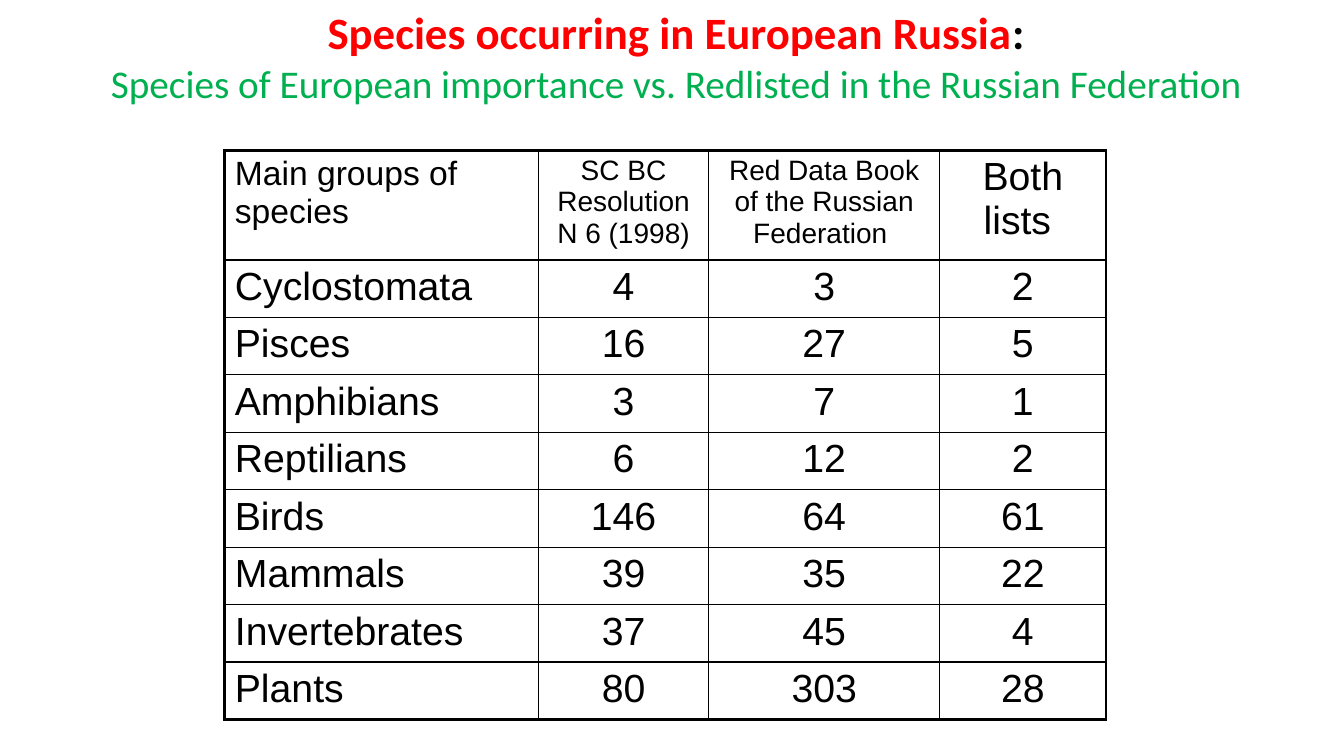
from dataclasses import dataclass

from lxml import etree
from pptx import Presentation
from pptx import util as u
from pptx.dml import color
from pptx.enum import text
from pptx.oxml import ns

BLACK = "000000"
CENTER = text.PP_ALIGN.CENTER
LEFT = text.PP_ALIGN.LEFT


@dataclass(frozen=True)
class Style:
    size: float
    font: str = "Arial"
    ink: str = BLACK
    bold: bool = False


@dataclass(frozen=True)
class Column:
    heading: str
    heading_size: float
    width: float
    align: text.PP_ALIGN = CENTER


COLUMNS = [
    Column("Main groups of species", 24, 3.11, LEFT),
    Column("SC BC Resolution N 6 (1998)", 20, 1.69),
    Column("Red Data Book of the Russian Federation ", 20, 2.29),
    Column("Both lists ", 28, 1.65),
]
SPECIES = [
    ("Cyclostomata", 4, 3, 2),
    ("Pisces", 16, 27, 5),
    ("Amphibians", 3, 7, 1),
    ("Reptilians", 6, 12, 2),
    ("Birds", 146, 64, 61),
    ("Mammals", 39, 35, 22),
    ("Invertebrates", 37, 45, 4),
    ("Plants", 80, 303, 28),
]
HEADING_HEIGHT, ROW_HEIGHT = 1.09, 0.57
BODY = Style(28)
TITLE = [
    [("Species occurring in European Russia", Style(32, "Calibri", "FF0000", True)),
     (":", Style(32, "Calibri", BLACK, True))],
    [("Species of European importance vs. Redlisted in the Russian Federation",
      Style(28, "Calibri", "00B050"))],
]


def rgb(value: str) -> color.RGBColor:
    return color.RGBColor.from_string(value)


def add_span(para, words: str, style: Style) -> None:
    span = para.add_run()
    span.text = words
    span.font.size = u.Pt(style.size)
    span.font.name = style.font
    span.font.bold = style.bold
    span.font.color.rgb = rgb(style.ink)


def add_border(cell, side: str, width: float) -> None:
    properties = cell._tc.get_or_add_tcPr()
    line = etree.SubElement(properties, ns.qn(f"a:ln{side}"), w=str(u.Pt(width)))
    fill = etree.SubElement(line, ns.qn("a:solidFill"))
    etree.SubElement(fill, ns.qn("a:srgbClr"), val=BLACK)


def fill_title(title) -> None:
    title.left, title.top = u.Inches(0.55), u.Inches(0)
    title.width, title.height = u.Inches(12.31), u.Inches(2.12)
    frame = title.text_frame
    frame.word_wrap = True
    frame.auto_size = text.MSO_AUTO_SIZE.NONE
    frame.vertical_anchor = text.MSO_ANCHOR.TOP
    for index, spans in enumerate(TITLE):
        para = frame.add_paragraph() if index else frame.paragraphs[0]
        para.alignment = CENTER
        for words, style in spans:
            add_span(para, words, style)


def add_species_table(page) -> None:
    row_count, column_count = len(SPECIES) + 1, len(COLUMNS)
    width = sum(column.width for column in COLUMNS)
    height = HEADING_HEIGHT + len(SPECIES) * ROW_HEIGHT
    table = page.shapes.add_table(
        row_count, column_count, u.Inches(2.23), u.Inches(1.49),
        u.Inches(width), u.Inches(height)).table
    table.first_row = table.horz_banding = False
    for index, column in enumerate(COLUMNS):
        table.columns[index].width = u.Inches(column.width)
    records = [tuple(column.heading for column in COLUMNS), *SPECIES]
    for r, record in enumerate(records):
        table.rows[r].height = u.Inches(ROW_HEIGHT if r else HEADING_HEIGHT)
        for c, (value, column) in enumerate(zip(record, COLUMNS)):
            cell = table.cell(r, c)
            para = cell.text_frame.paragraphs[0]
            para.alignment = column.align
            add_span(para, str(value), BODY if r else Style(column.heading_size))
            outer = {"L": c == 0, "R": c == column_count - 1,
                     "T": r == 0, "B": r == row_count - 1}
            for side, is_outer in outer.items():
                add_border(cell, side, 2.25 if is_outer else 1)
            cell.fill.background()


def main() -> None:
    deck = Presentation()
    deck.slide_width, deck.slide_height = u.Inches(13.33), u.Inches(7.5)
    page = deck.slides.add_slide(deck.slide_layouts.get_by_name("Title Only"))
    fill_title(page.shapes.title)
    add_species_table(page)
    deck.save("out.pptx")


if __name__ == "__main__":
    main()
